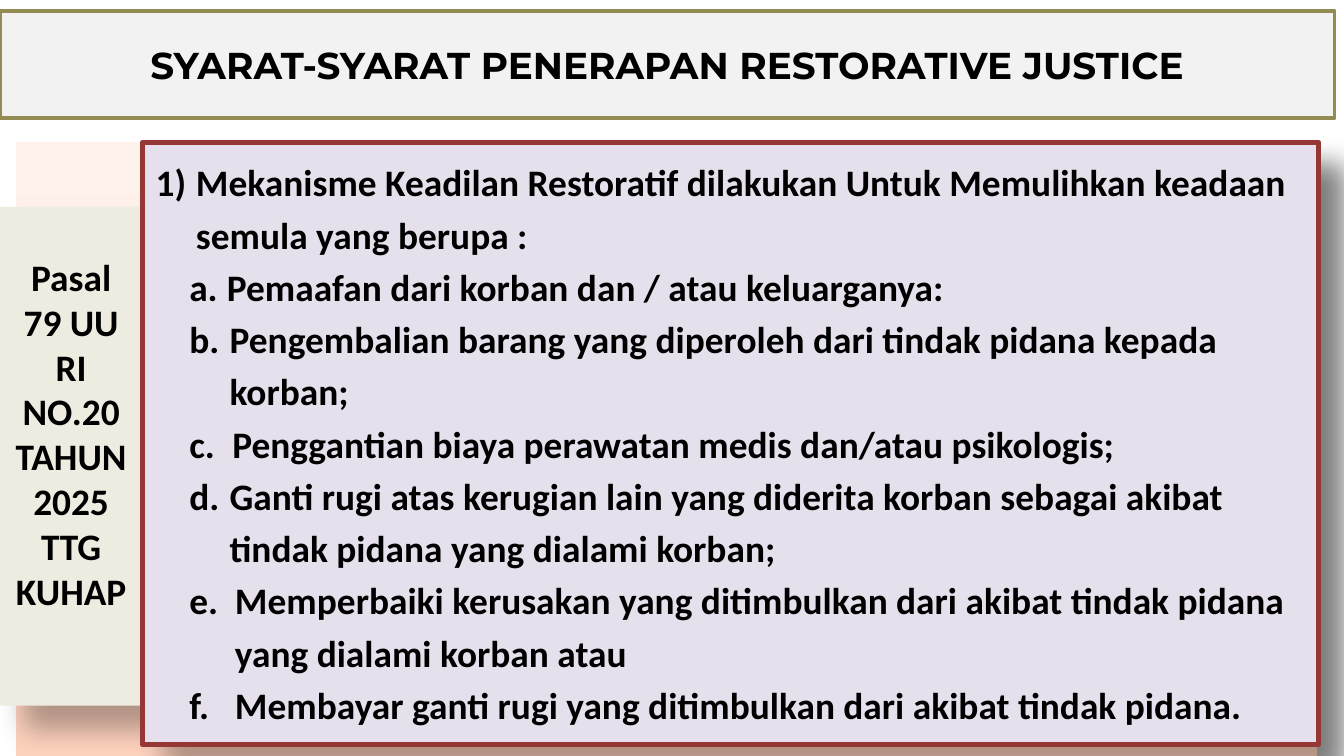
from lxml import etree
from pptx import Presentation
from pptx.dml.color import RGBColor
from pptx.enum.shapes import MSO_SHAPE
from pptx.enum.text import MSO_ANCHOR, PP_ALIGN
from pptx.oxml import parse_xml
from pptx.oxml.ns import nsdecls, qn
from pptx.util import Inches, Pt

RECT = MSO_SHAPE.RECTANGLE
MIDDLE = MSO_ANCHOR.MIDDLE
LEFT, CENTER = PP_ALIGN.LEFT, PP_ALIGN.CENTER

COLORS = {
    "text": "000000",
    "shadow": "000000",
    "title_fill": "F2F2F2",
    "title_line": "948A54",
    "article_fill": "EEECE1",
    "terms_fill": "E6E0EC",
    "terms_line": "953735",
}
BACKDROP_STOPS = [(0, "FFD2BD"), (35, "FFDED0"), (100, "FFF2ED")]

TITLE = "SYARAT-SYARAT PENERAPAN RESTORATIVE JUSTICE"
ARTICLE = "Pasal 79 UU RI NO.20 TAHUN 2025 TTG KUHAP"
# Each term: text, left margin and hanging indent in inches
TERMS = [
    ("1)\tMekanisme Keadilan Restoratif dilakukan Untuk Memulihkan keadaan "
     "semula yang berupa :", 0.3, 0.3),
    ("a.\tPemaafan dari korban dan / atau keluarganya:", 0.53, 0.28),
    ("b.\tPengembalian barang yang diperoleh dari tindak pidana kepada "
     "korban;", 0.55, 0.3),
    ("c.\tPenggantian biaya perawatan medis dan/atau psikologis;", 0.57, 0.32),
    ("d.\tGanti rugi atas kerugian lain yang diderita korban sebagai akibat "
     "tindak pidana yang dialami korban;", 0.55, 0.3),
    ("e.\tMemperbaiki kerusakan yang ditimbulkan dari akibat tindak pidana "
     "yang dialami korban atau", 0.59, 0.34),
    ("f.\tMembayar ganti rugi yang ditimbulkan dari akibat tindak pidana.",
     0.59, 0.34),
]


def add_shadow(shape, alpha=30, blur=15, distance=18, angle=45):
    """Soft outer shadow: percent, points, points and degrees."""
    effects = shape._element.spPr.find(qn("a:effectLst"))
    effects.append(parse_xml(
        f'<a:outerShdw {nsdecls("a")} blurRad="{Pt(blur)}" '
        f'dist="{Pt(distance)}" dir="{angle * 60000}" algn="tl" '
        f'rotWithShape="0"><a:srgbClr val="{COLORS["shadow"]}">'
        f'<a:alpha val="{alpha * 1000}"/></a:srgbClr></a:outerShdw>'))


def add_panel(slide, box, fill=None, line=None, line_width=0, shadow=False):
    panel = slide.shapes.add_shape(RECT, *(Inches(v) for v in box))
    panel.shadow.inherit = False
    if fill:
        panel.fill.solid()
        panel.fill.fore_color.rgb = RGBColor.from_string(COLORS[fill])
    if line:
        panel.line.color.rgb = RGBColor.from_string(COLORS[line])
        panel.line.width = Pt(line_width)
    else:
        panel.line.fill.background()
    if shadow:
        add_shadow(panel)
    frame = panel.text_frame
    frame.word_wrap = True
    frame.vertical_anchor = MIDDLE
    return panel


def style_paragraph(paragraph, font_name, align):
    paragraph.alignment = align
    for run in paragraph.runs:
        run.font.name = font_name
        run.font.size = Pt(20)
        run.font.bold = True
        run.font.color.rgb = RGBColor.from_string(COLORS["text"])


def add_backdrop(slide, box):
    backdrop = add_panel(slide, box, shadow=True)
    backdrop.fill.gradient()
    backdrop.fill.gradient_angle = 90  # runs from the bottom up
    stops = backdrop._element.spPr.find(".//" + qn("a:gsLst"))
    for stop in list(stops):
        stops.remove(stop)
    for position, color in BACKDROP_STOPS:
        stop = etree.SubElement(stops, qn("a:gs"), pos=str(position * 1000))
        etree.SubElement(stop, qn("a:srgbClr"), val=color)


def add_title(slide, box):
    banner = add_panel(slide, box, "title_fill", "title_line", 2)
    banner.text_frame.text = TITLE
    style_paragraph(banner.text_frame.paragraphs[0], "Montserrat", CENTER)


def add_article(slide, box):
    article = add_panel(slide, box, "article_fill", shadow=True)
    frame = article.text_frame
    frame.margin_bottom = Inches(0.39)
    frame.text = ARTICLE
    style_paragraph(frame.paragraphs[0], "Calibri", CENTER)


def add_terms(slide, box):
    panel = add_panel(slide, box, "terms_fill", "terms_line", 3, shadow=True)
    frame = panel.text_frame
    frame.margin_bottom = Inches(0.11)
    frame.text = "\n".join(text for text, _, _ in TERMS)
    for paragraph, (_, margin, hanging) in zip(frame.paragraphs, TERMS):
        properties = paragraph._p.get_or_add_pPr()
        properties.set("marL", str(Inches(margin)))
        properties.set("indent", str(-Inches(hanging)))
        paragraph.line_spacing = Pt(28)
        style_paragraph(paragraph, "Calibri", LEFT)


def main():
    deck = Presentation()
    # Widescreen, 16:9
    deck.slide_width = Inches(10)
    deck.slide_height = deck.slide_width * 9 // 16
    slide = deck.slides.add_slide(deck.slide_layouts[6])

    add_backdrop(slide, (0.12, 1.06, 9.68, 4.57))
    add_title(slide, (0, 0.08, 9.93, 0.8))
    add_article(slide, (0, 1.54, 1.06, 3.71))
    add_terms(slide, (1.06, 1.06, 8.75, 4.48))

    deck.save("out.pptx")


if __name__ == "__main__":
    main()
